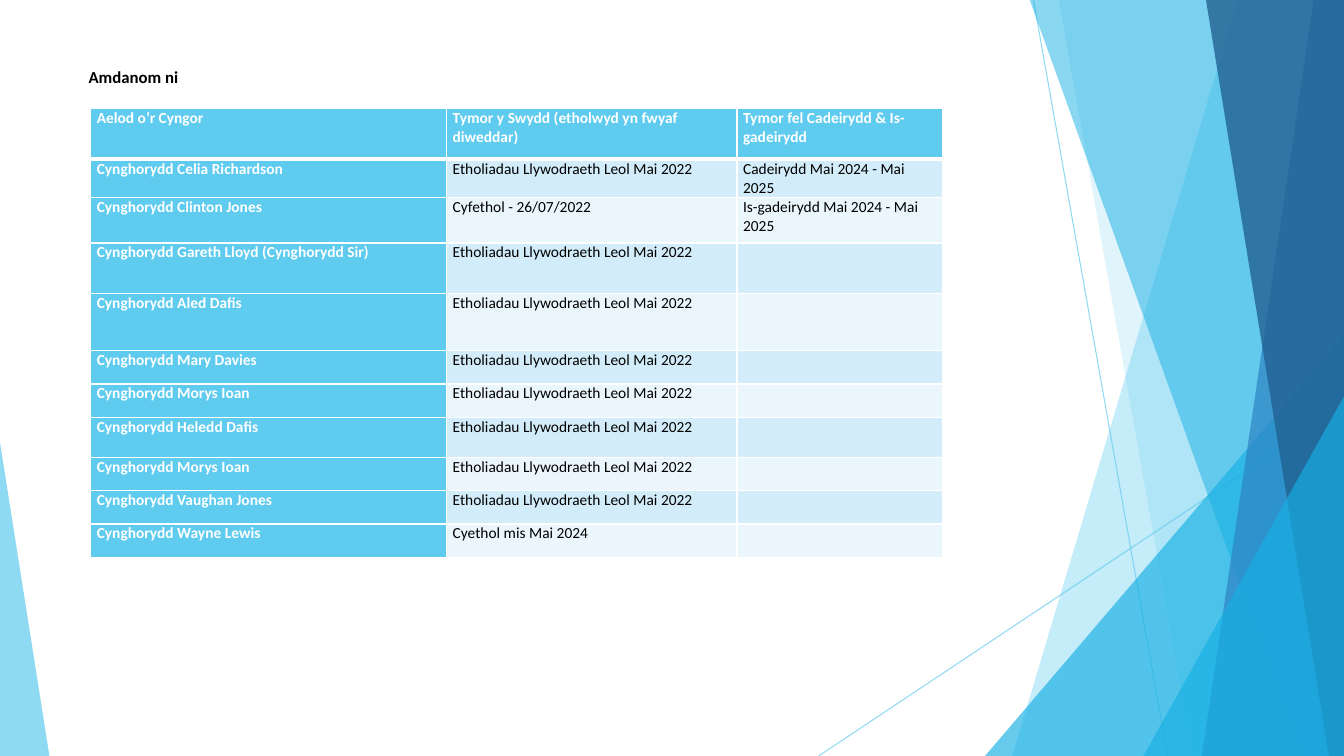
from lxml import etree
from pptx import Presentation
from pptx.dml.color import RGBColor
from pptx.enum import shapes
from pptx.oxml import ns
from pptx.util import Inches, Pt

SKY = RGBColor(0x5F, 0xCB, 0xEF)
CYAN = RGBColor(0x17, 0xB0, 0xE4)
BLUE = RGBColor(0x2E, 0x83, 0xC3)
NAVY = RGBColor(0x22, 0x62, 0x92)
BAND_DARK = RGBColor(0xD2, 0xEC, 0xF9)
BAND_LIGHT = RGBColor(0xEA, 0xF6, 0xFC)
WHITE = RGBColor(0xFF, 0xFF, 0xFF)
BLACK = RGBColor(0, 0, 0)
FONT = "Calibri"
WIDTH, HEIGHT, TOP = 13.33, 7.5, -0.01

TITLE = "Amdanom ni"
HEADER = ("Aelod o’r Cyngor", "Tymor y Swydd (etholwyd yn fwyaf diweddar)",
          "Tymor fel Cadeirydd & Is-gadeirydd")
ELECTED = "Etholiadau Llywodraeth Leol Mai 2022"
MEMBERS = [
    ("Celia Richardson", ELECTED, "Cadeirydd Mai 2024 - Mai 2025"),
    ("Clinton Jones", "Cyfethol - 26/07/2022", "Is-gadeirydd Mai 2024 - Mai 2025"),
    ("Gareth Lloyd (Cynghorydd Sir)", ELECTED, ""),
    ("Aled Dafis", ELECTED, ""),
    ("Mary Davies", ELECTED, ""),
    ("Morys Ioan", ELECTED, ""),
    ("Heledd Dafis", ELECTED, ""),
    ("Morys Ioan", ELECTED, ""),
    ("Vaughan Jones", ELECTED, ""),
    ("Wayne Lewis", "Cyethol mis Mai 2024", ""),
]
COLUMNS = (3.53, 2.88, 2.04)
ROWS = (0.5, 0.38, 0.45, 0.5, 0.57, 0.33, 0.33, 0.4, 0.33, 0.33, 0.33)

LINES = [(10.25, 0, 11.58, HEIGHT), (WIDTH, 4.03, 8.12, HEIGHT)]
BANDS_BACK = [(12.28, 10.04, SKY, 36), (10.5, 11.83, SKY, 20)]
BANDS_FRONT = [(10.21, 12.91, CYAN, 50), (13.03, 11.92, BLUE, 70), (11.96, 13.18, NAVY, 80)]
TRIANGLE_BACK = (9.77, 3.33, 3.56, 1, CYAN, 66)
TRIANGLES_FRONT = [(11.34, 3.93, 1.99, 1, CYAN, 66), (0, 4.39, 0.49, 0, SKY, 70)]


def set_alpha(fill_parent, percent):
    color = fill_parent.find(".//" + ns.qn("a:srgbClr"))
    etree.SubElement(color, ns.qn("a:alpha"), val=str(percent * 1000))


def paint(sp, color, percent):
    sp.shadow.inherit = False
    sp.fill.solid()
    sp.fill.fore_color.rgb = color
    sp.line.fill.background()
    set_alpha(sp._element.spPr, percent)


def add_line(s, x1, y1, x2, y2):
    line = s.shapes.add_connector(shapes.MSO_CONNECTOR.STRAIGHT,
                                  Inches(x1), Inches(y1), Inches(x2), Inches(y2))
    line.line.color.rgb = SKY
    line.line.width = Pt(0.75)
    set_alpha(line._element.spPr, 70)
    etree.SubElement(line._element.spPr, ns.qn("a:effectLst"))


def add_band(s, top_x, bottom_x, color, percent):
    builder = s.shapes.build_freeform(Inches(top_x), Inches(TOP))
    builder.add_line_segments([(Inches(x), Inches(y)) for x, y in
                               ((WIDTH, TOP), (WIDTH, HEIGHT), (bottom_x, HEIGHT))])
    paint(builder.convert_to_shape(), color, percent)


def add_triangle(s, left, top, width, apex, color, percent):
    sp = s.shapes.add_shape(shapes.MSO_SHAPE.ISOSCELES_TRIANGLE, Inches(left), Inches(top),
                            Inches(width), Inches(HEIGHT - top))
    sp.adjustments[0] = apex
    paint(sp, color, percent)


def set_font(p, size, color, bold):
    p.font.name = FONT
    p.font.size = Pt(size)
    p.font.bold = bold
    p.font.color.rgb = color


def set_borders(cell, top, bottom):
    props = cell._tc.get_or_add_tcPr()
    for i, (side, width) in enumerate((("L", 1), ("R", 1), ("T", top), ("B", bottom))):
        ln = etree.Element(ns.qn("a:ln" + side), w=str(Pt(width)))
        fill = etree.SubElement(ln, ns.qn("a:solidFill"))
        etree.SubElement(fill, ns.qn("a:srgbClr"), val=str(WHITE))
        props.insert(i, ln)


def fill_cell(cell, text, row, col):
    strong = row == 0 or col == 0
    cell.margin_left = cell.margin_right = Inches(0.06)
    cell.margin_top = cell.margin_bottom = 0
    cell.fill.solid()
    cell.fill.fore_color.rgb = SKY if strong else (BAND_LIGHT, BAND_DARK)[row % 2]
    set_borders(cell, 3 if row == 1 else 1, 3 if row == 0 else 1)
    p = cell.text_frame.paragraphs[0]
    p.text = text
    set_font(p, 11, WHITE if strong else BLACK, strong)


def add_members(s):
    frame = s.shapes.add_table(len(ROWS), len(COLUMNS), Inches(0.9), Inches(1.08),
                               Inches(sum(COLUMNS)), Inches(sum(ROWS)))
    table = frame.table
    for column, width in zip(table.columns, COLUMNS):
        column.width = Inches(width)
    for row, height in zip(table.rows, ROWS):
        row.height = Inches(height)
    content = [HEADER] + [("Cynghorydd " + name, term, chair) for name, term, chair in MEMBERS]
    for i, values in enumerate(content):
        for j, value in enumerate(values):
            fill_cell(table.cell(i, j), value, i, j)


def add_title(s):
    tf = s.shapes.add_textbox(Inches(0.78), Inches(0.61), Inches(4.65), Inches(0.3)).text_frame
    tf.word_wrap = True
    p = tf.paragraphs[0]
    p.text = TITLE
    set_font(p, 12, BLACK, True)


def main():
    prs = Presentation()
    prs.slide_width, prs.slide_height = Inches(WIDTH), Inches(HEIGHT)
    s = prs.slides.add_slide(prs.slide_layouts[6])
    for line in LINES:
        add_line(s, *line)
    for band in BANDS_BACK:
        add_band(s, *band)
    add_triangle(s, *TRIANGLE_BACK)
    for band in BANDS_FRONT:
        add_band(s, *band)
    for triangle in TRIANGLES_FRONT:
        add_triangle(s, *triangle)
    add_members(s)
    add_title(s)
    prs.save("out.pptx")


if __name__ == "__main__":
    main()
